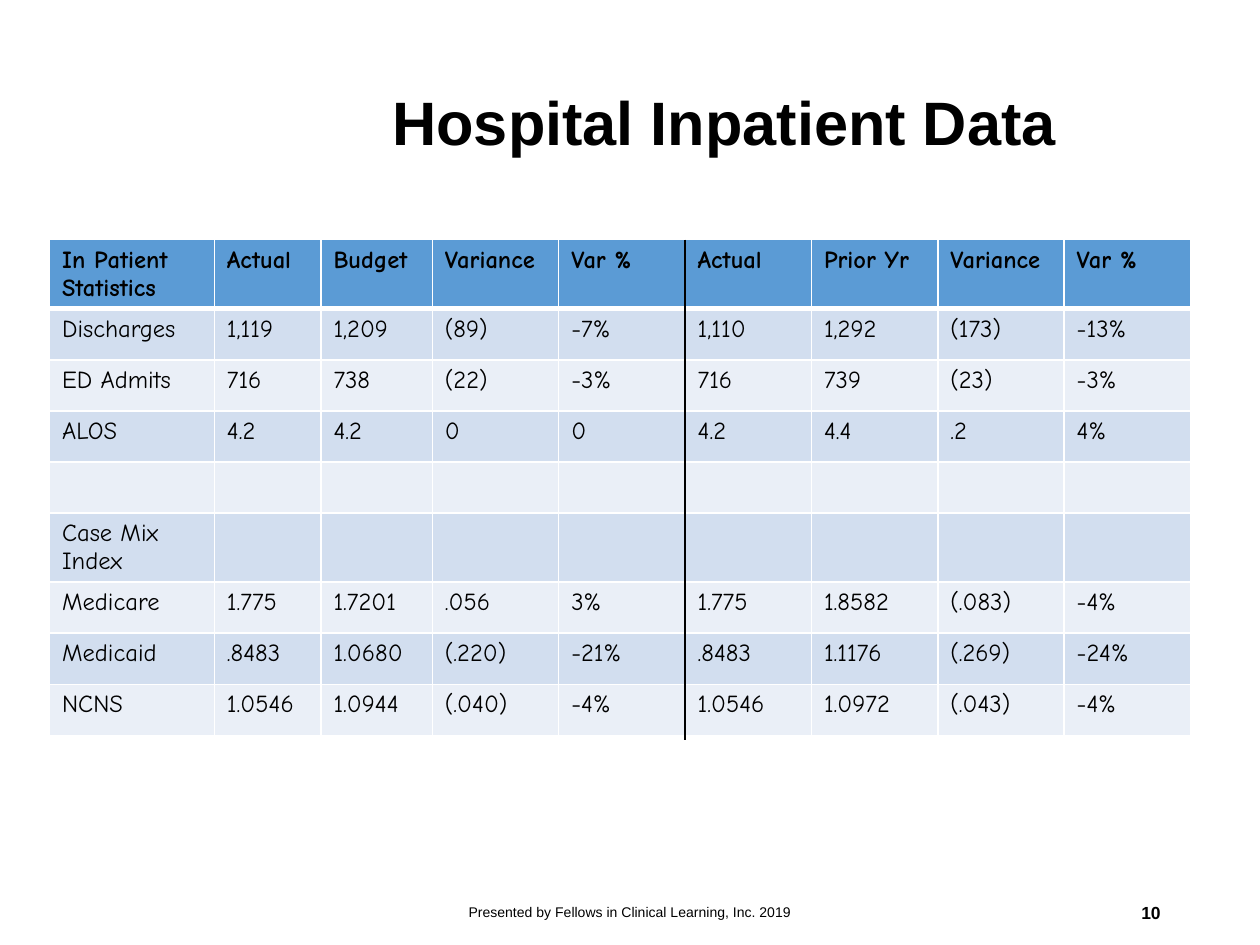
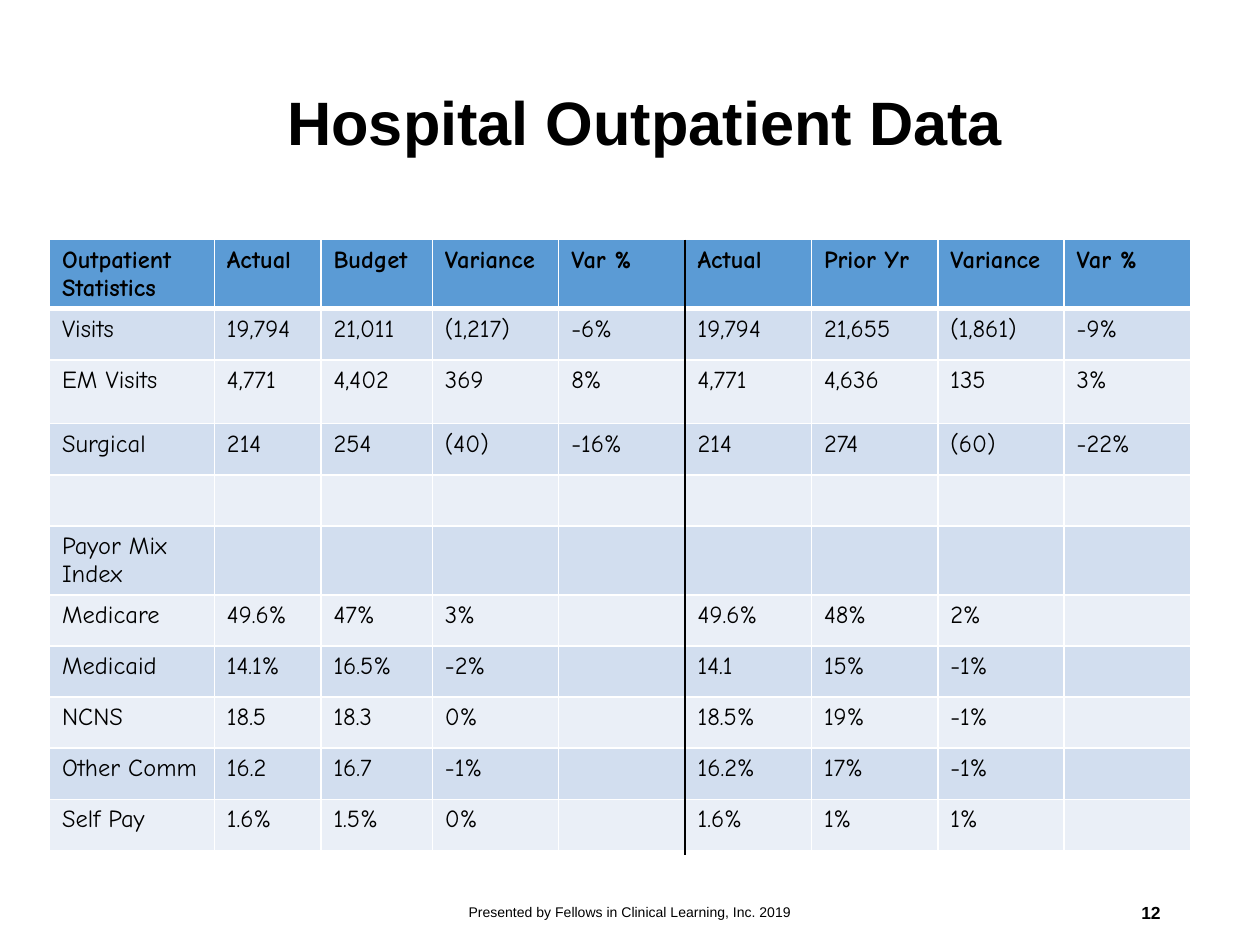
from lxml import etree
from pptx import Presentation
from pptx.dml.color import RGBColor
from pptx.enum.shapes import MSO_CONNECTOR
from pptx.enum.text import MSO_ANCHOR, MSO_AUTO_SIZE, PP_ALIGN
from pptx.oxml import parse_xml
from pptx.oxml.ns import nsdecls, qn
from pptx.util import Pt

LINE = MSO_CONNECTOR.STRAIGHT
MID = MSO_ANCHOR.MIDDLE
FIXED = MSO_AUTO_SIZE.NONE
LEFT, CENTER, RIGHT = PP_ALIGN.LEFT, PP_ALIGN.CENTER, PP_ALIGN.RIGHT

HUES = {"ink": "000000", "edge": "FFFFFF", "head": "5B9BD5",
        "odd": "D2DEEF", "even": "EAEFF7"}
FONTS = {
    "title": {"name": "Arial", "size": Pt(35), "bold": True},
    "foot": {"name": "Arial", "size": Pt(8), "bold": False},
    "page": {"name": "Arial", "size": Pt(10), "bold": True},
    "head": {"name": "Comic Neue", "size": Pt(14), "bold": True},
    "cell": {"name": "Comic Neue", "size": Pt(14), "bold": False},
}
CREDIT = "Presented by Fellows in Clinical Learning, Inc. 2019"
HEADS = ["Actual", "Budget", "Variance", "Var %",
         "Actual", "Prior Yr", "Variance", "Var %"]
COLS = [94.2, 60.9, 63.7] + [72.2] * 6
X, Y, ROW = 28.3, 137, 29.2
SPLIT = X + sum(COLS[:5])

SLIDES = [
    {"title": "Hospital Inpatient Data", "align": CENTER, "page": "10",
     "label": "In Patient Statistics", "end": 422.8, "tall": {},
     "rows": [
         ["Discharges", "1,119", "1,209", "(89)", "-7%", "1,110", "1,292", "(173)", "-13%"],
         ["ED Admits", "716", "738", "(22)", "-3%", "716", "739", "(23)", "-3%"],
         ["ALOS", "4.2", "4.2", "0", "0", "4.2", "4.4", ".2", "4%"],
         [],
         ["Case Mix Index"],
         ["Medicare", "1.775", "1.7201", ".056", "3%", "1.775", "1.8582", "(.083)", "-4%"],
         ["Medicaid", ".8483", "1.0680", "(.220)", "-21%", ".8483", "1.1176", "(.269)", "-24%"],
         ["NCNS", "1.0546", "1.0944", "(.040)", "-4%", "1.0546", "1.0972", "(.043)", "-4%"],
     ]},
    {"title": "Hospital Outpatient Data", "align": LEFT, "page": "12",
     "label": "Outpatient Statistics", "end": 488.6, "tall": {2: 36.5},
     "rows": [
         ["Visits", "19,794", "21,011", "(1,217)", "-6%", "19,794", "21,655", "(1,861)", "-9%"],
         ["EM Visits", "4,771", "4,402", "369", "8%", "4,771", "4,636", "135", "3%"],
         ["Surgical", "214", "254", "(40)", "-16%", "214", "274", "(60)", "-22%"],
         [],
         ["Payor Mix Index"],
         ["Medicare", "49.6%", "47%", "3%", "", "49.6%", "48%", "2%"],
         ["Medicaid", "14.1%", "16.5%", "-2%", "", "14.1", "15%", "-1%"],
         ["NCNS", "18.5", "18.3", "0%", "", "18.5%", "19%", "-1%"],
         ["Other Comm", "16.2", "16.7", "-1%", "", "16.2%", "17%", "-1%"],
         ["Self Pay", "1.6%", "1.5%", "0%", "", "1.6%", "1%", "1%"],
     ]},
]


def write(frame, text, kind, align=LEFT):
    para = frame.paragraphs[0]
    para.alignment = align
    run = para.add_run()
    run.text = text
    for key, val in FONTS[kind].items():
        setattr(run.font, key, val)
    run.font.color.rgb = RGBColor.from_string(HUES["ink"])
    return para


def border(cell, row):
    widths = {"L": 1, "R": 1, "T": 3 if row == 1 else 1, "B": 3 if row == 0 else 1}
    props = cell._tc.get_or_add_tcPr()
    for side, wide in widths.items():
        props.append(parse_xml(
            f'<a:ln{side} {nsdecls("a")} w="{Pt(wide)}"><a:solidFill>'
            f'<a:srgbClr val="{HUES["edge"]}"/></a:solidFill></a:ln{side}>'))


deck = Presentation()
deck.slide_width, deck.slide_height = Pt(720), Pt(540)

for data in SLIDES:
    slide = deck.slides.add_slide(deck.slide_layouts[5])

    title = slide.shapes.title
    place = {"left": 157, "top": 19.4, "width": 514, "height": 104.4}
    for key, val in place.items():
        setattr(title, key, Pt(val))
    title.text_frame.vertical_anchor = MID
    title.text_frame.auto_size = FIXED
    para = write(title.text_frame, data["title"], "title", data["align"])
    para.line_spacing = 0.9

    rows = [[data["label"]] + HEADS] + data["rows"]
    frame = slide.shapes.add_table(len(rows), len(COLS), Pt(X), Pt(Y),
                                   Pt(sum(COLS)), Pt(ROW * len(rows)))
    grid = frame.table
    for col, wide in zip(grid.columns, COLS):
        col.width = Pt(wide)
    for r, row in enumerate(rows):
        grid.rows[r].height = Pt(data["tall"].get(r, ROW))
        hue = "head" if r == 0 else "odd" if r % 2 else "even"
        for c in range(len(COLS)):
            cell = grid.cell(r, c)
            border(cell, r)
            cell.fill.solid()
            cell.fill.fore_color.rgb = RGBColor.from_string(HUES[hue])
            if c < len(row) and row[c]:
                write(cell.text_frame, row[c], "cell" if r else "head")

    for left, wide, text, kind, align in [
            (238.3, 243.4, CREDIT, "foot", CENTER),
            (508.3, 162, data["page"], "page", RIGHT)]:
        box = slide.shapes.add_textbox(Pt(left), Pt(506.9), Pt(wide), Pt(28.8))
        box.text_frame.word_wrap = True
        box.text_frame.vertical_anchor = MID
        write(box.text_frame, text, kind, align)

    rule = slide.shapes.add_connector(LINE, Pt(SPLIT), Pt(Y), Pt(SPLIT), Pt(data["end"]))
    rule.line.width = Pt(1.5)
    rule.line.color.rgb = RGBColor.from_string(HUES["ink"])
    etree.SubElement(rule._element.spPr, qn("a:effectLst"))

deck.save("out.pptx")
